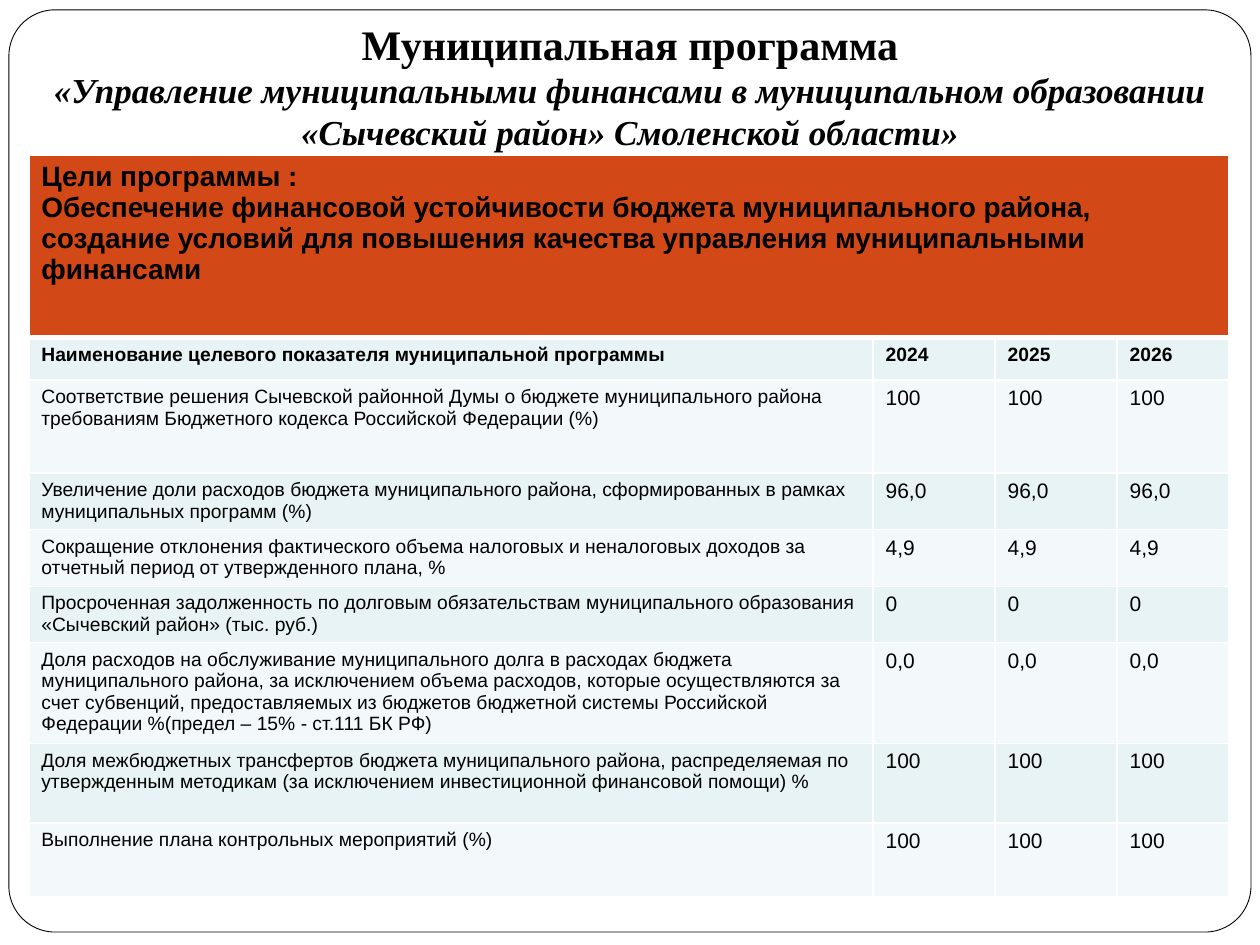
from dataclasses import dataclass

from lxml import etree
from pptx import Presentation
from pptx.dml.color import RGBColor
from pptx.enum import shapes, text
from pptx.oxml import ns
from pptx.util import Cm, Pt


@dataclass(frozen=True)
class Theme:
    ink: str = "000000"
    paper: str = "FFFFFF"
    accent: str = "D34817"
    bands: tuple[str, str] = ("E7F3F4", "F3F9FA")
    title_font: str = "Times New Roman"
    body_font: str = "Arial"
    title_size: float = 24
    subtitle_size: float = 20
    goal_size: float = 16
    label_size: float = 11
    value_size: float = 12
    thin: float = 1
    thick: float = 3


@dataclass(frozen=True)
class Indicator:
    label: str
    values: tuple[str, str, str]
    height: float
    header: bool = False


THEME = Theme()
TITLE = "Муниципальная программа"
SUBTITLE = (
    "«Управление муниципальными финансами в муниципальном образовании "
    "«Сычевский район» Смоленской области»"
)
GOAL = (
    "Цели программы :\n"
    "Обеспечение финансовой устойчивости бюджета муниципального района, "
    "создание условий для повышения качества управления муниципальными финансами"
)
GOAL_HEIGHT = 3.68
COLUMN_WIDTHS = (17.02, 2.46, 2.46, 2.26)
INDICATORS = (
    Indicator("Наименование целевого показателя муниципальной программы",
              ("2024", "2025", "2026"), 0.86, header=True),
    Indicator("Соответствие решения Сычевской районной Думы о бюджете муниципального района "
              "требованиям Бюджетного кодекса Российской Федерации (%)",
              ("100",) * 3, 1.88),
    Indicator("Увеличение доли расходов бюджета муниципального района, сформированных в "
              "рамках муниципальных программ (%)",
              ("96,0",) * 3, 1.14),
    Indicator("Сокращение отклонения фактического объема налоговых и неналоговых доходов за "
              "отчетный период от утвержденного плана, %",
              ("4,9",) * 3, 1.14),
    Indicator("Просроченная задолженность по долговым обязательствам муниципального образования "
              "«Сычевский район» (тыс. руб.)",
              ("0",) * 3, 1.14),
    Indicator("Доля расходов на обслуживание муниципального долга в расходах бюджета "
              "муниципального района, за исключением объема расходов, которые "
              "осуществляются за счет субвенций, предоставляемых из бюджетов бюджетной "
              "системы Российской Федерации %(предел – 15% - ст.111 БК РФ)",
              ("0,0",) * 3, 2.03),
    Indicator("Доля межбюджетных трансфертов бюджета муниципального района, "
              "распределяемая по утвержденным методикам (за исключением "
              "инвестиционной финансовой помощи) %",
              ("100",) * 3, 1.6),
    Indicator("Выполнение плана контрольных мероприятий (%)", ("100",) * 3, 1.5),
)


def rgb(value: str) -> RGBColor:
    return RGBColor.from_string(value)


def style_font(font, name: str, size: float, bold: bool, italic: bool = False) -> None:
    font.name, font.size, font.bold, font.italic = name, Pt(size), bold, italic
    font.color.rgb = rgb(THEME.ink)


def draw_frame(slide) -> None:
    sp = slide.shapes.add_shape(shapes.MSO_SHAPE.ROUNDED_RECTANGLE,
                                Cm(0.18), Cm(0.2), Cm(25.04), Cm(18.59))
    sp.adjustments[0] = 0.05
    sp.shadow.inherit = False
    sp.fill.solid()
    sp.fill.fore_color.rgb = rgb(THEME.paper)
    sp.line.color.rgb = rgb(THEME.ink)
    sp.line.width = Pt(0.5)
    slide.shapes._spTree.insert(2, sp._element)


def draw_title(slide) -> None:
    sp = slide.shapes.title
    sp.left, sp.top, sp.width, sp.height = Cm(0), Cm(0), Cm(25.4), Cm(4.17)
    tf = sp.text_frame
    tf.word_wrap = True
    tf.auto_size = text.MSO_AUTO_SIZE.NONE
    tf.vertical_anchor = text.MSO_ANCHOR.BOTTOM
    tf.margin_left = tf.margin_right = Cm(0.25)
    tf.margin_top, tf.margin_bottom = Cm(0.13), Cm(1.09)
    p = tf.paragraphs[0]
    p.alignment = text.PP_ALIGN.CENTER
    r = p.add_run()
    r.text = TITLE
    style_font(r.font, THEME.title_font, THEME.title_size, True)
    p.add_line_break()
    r = p.add_run()
    r.text = SUBTITLE
    style_font(r.font, THEME.title_font, THEME.subtitle_size, True, True)


def set_borders(cell, top: float, bottom: float) -> None:
    tc_pr = cell._tc.get_or_add_tcPr()
    widths = {"L": THEME.thin, "R": THEME.thin, "T": top, "B": bottom}
    for side, width in widths.items():
        line = etree.SubElement(tc_pr, ns.qn(f"a:ln{side}"), w=str(Pt(width)))
        fill = etree.SubElement(line, ns.qn("a:solidFill"))
        etree.SubElement(fill, ns.qn("a:srgbClr"), val=THEME.paper)


def fill_cell(cell, content: str, size: float, bold: bool, fill: str,
              top: float = THEME.thin, bottom: float = THEME.thin) -> None:
    set_borders(cell, top, bottom)
    cell.fill.solid()
    cell.fill.fore_color.rgb = rgb(fill)
    cell.text = content
    for p in cell.text_frame.paragraphs:
        style_font(p.font, THEME.body_font, size, bold)


def draw_table(slide) -> None:
    heights = (GOAL_HEIGHT, *(item.height for item in INDICATORS))
    table = slide.shapes.add_table(len(heights), len(COLUMN_WIDTHS), Cm(0.58), Cm(3.12),
                                   Cm(sum(COLUMN_WIDTHS)), Cm(sum(heights))).table
    table.first_row = table.horz_banding = False
    for column, width in zip(table.columns, COLUMN_WIDTHS):
        column.width = Cm(width)
    for row, height in zip(table.rows, heights):
        row.height = Cm(height)

    table.cell(0, 0).merge(table.cell(0, len(COLUMN_WIDTHS) - 1))
    for i, cell in enumerate(table.rows[0].cells):
        fill_cell(cell, "" if i else GOAL, THEME.goal_size, True, THEME.accent,
                  bottom=THEME.thick)

    for i, item in enumerate(INDICATORS):
        top = THEME.thick if item.header else THEME.thin
        value_size = THEME.label_size if item.header else THEME.value_size
        for j, content in enumerate((item.label, *item.values)):
            size = value_size if j else THEME.label_size
            fill_cell(table.cell(i + 1, j), content, size, item.header,
                      THEME.bands[i % 2], top=top)


def main() -> None:
    prs = Presentation()
    prs.slide_width, prs.slide_height = Cm(25.4), Cm(19.05)
    slide = prs.slides.add_slide(prs.slide_layouts.get_by_name("Title Only"))
    draw_frame(slide)
    draw_title(slide)
    draw_table(slide)
    prs.save("out.pptx")


if __name__ == "__main__":
    main()
